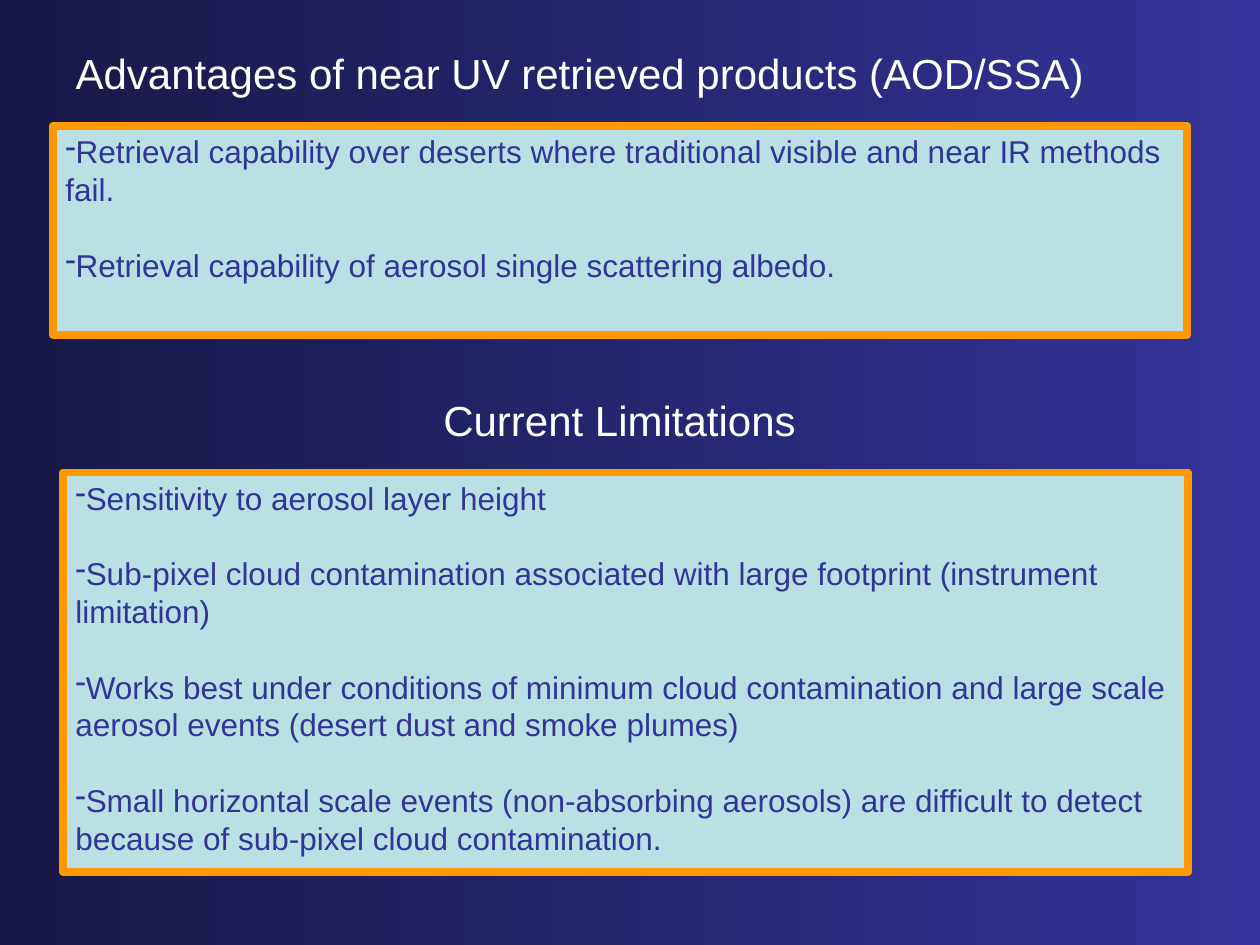
from lxml.etree import SubElement
from pptx import Presentation
from pptx.dml.color import RGBColor
from pptx.enum.shapes import MSO_SHAPE
from pptx.enum.text import MSO_ANCHOR, PP_ALIGN
from pptx.oxml.ns import qn
from pptx.util import Inches, Pt

FONT = "Arial"
LINE_HEIGHT = 1.2
WHITE = RGBColor(0xFF, 0xFF, 0xFF)
NAVY = RGBColor(0x18, 0x18, 0x47)
INDIGO = RGBColor(0x33, 0x33, 0x99)
PALE_TEAL = RGBColor(0xBB, 0xE0, 0xE3)
ORANGE = RGBColor(0xFF, 0x99, 0x00)

ADVANTAGES = [
    "Retrieval capability over deserts where traditional visible and near IR methods fail.",
    "Retrieval capability of aerosol single scattering albedo.",
]
LIMITATIONS = [
    "Sensitivity to aerosol layer height",
    "Sub-pixel cloud contamination associated with large footprint (instrument limitation)",
    "Works best under conditions of minimum cloud contamination and large scale "
    "aerosol events (desert dust and smoke plumes)",
    "Small horizontal scale events (non-absorbing aerosols) are difficult to detect "
    "because of sub-pixel cloud contamination.",
]


def set_background(page):
    fill = page.background.fill
    fill.gradient()
    fill.gradient_angle = 0
    for stop, color, position in zip(fill.gradient_stops, (NAVY, INDIGO), (0, 1)):
        stop.color.rgb = color
        stop.position = position


def format_paragraph(paragraph, size, color):
    paragraph.alignment = PP_ALIGN.LEFT
    paragraph.line_spacing = Pt(size * LINE_HEIGHT)
    paragraph.font.name = FONT
    paragraph.font.size = Pt(size)
    paragraph.font.color.rgb = color


def add_dash_bullet(paragraph):
    properties = paragraph._p.get_or_add_pPr()
    properties.set("marL", "0")
    properties.set("indent", "0")
    SubElement(properties, qn("a:buChar")).set("char", "-")


def fill_heading(box, text):
    frame = box.text_frame
    frame.word_wrap = False
    frame.vertical_anchor = MSO_ANCHOR.TOP
    frame.text = text
    format_paragraph(frame.paragraphs[0], 24, WHITE)


def add_panel(page, left, top, width, height, items):
    panel = page.shapes.add_shape(
        MSO_SHAPE.RECTANGLE, Inches(left), Inches(top), Inches(width), Inches(height)
    )
    panel.shadow.inherit = False
    panel.fill.solid()
    panel.fill.fore_color.rgb = PALE_TEAL
    panel.line.color.rgb = ORANGE
    panel.line.width = Pt(4.5)
    frame = panel.text_frame
    frame.word_wrap = True
    frame.vertical_anchor = MSO_ANCHOR.TOP
    frame.text = "\n".join(items)
    for index, paragraph in enumerate(frame.paragraphs):
        add_dash_bullet(paragraph)
        format_paragraph(paragraph, 18, INDIGO)
        if index:
            paragraph.space_before = Pt(18 * LINE_HEIGHT)


def main():
    deck = Presentation()
    deck.slide_width, deck.slide_height = Inches(10), Inches(7.5)
    page = deck.slides.add_slide(deck.slide_layouts[5])
    set_background(page)

    title = page.shapes.title
    title.left, title.top = Inches(0.5), Inches(0.33)
    title.width, title.height = Inches(8.8), Inches(0.5)
    fill_heading(title, "Advantages of near UV retrieved products (AOD/SSA)")
    add_panel(page, 0.42, 1, 9, 1.66, ADVANTAGES)

    subheading = page.shapes.add_textbox(
        Inches(3.42), Inches(3.08), Inches(3.23), Inches(0.5)
    )
    fill_heading(subheading, "Current Limitations")
    add_panel(page, 0.5, 3.75, 8.93, 3.17, LIMITATIONS)

    deck.save("out.pptx")


if __name__ == "__main__":
    main()
